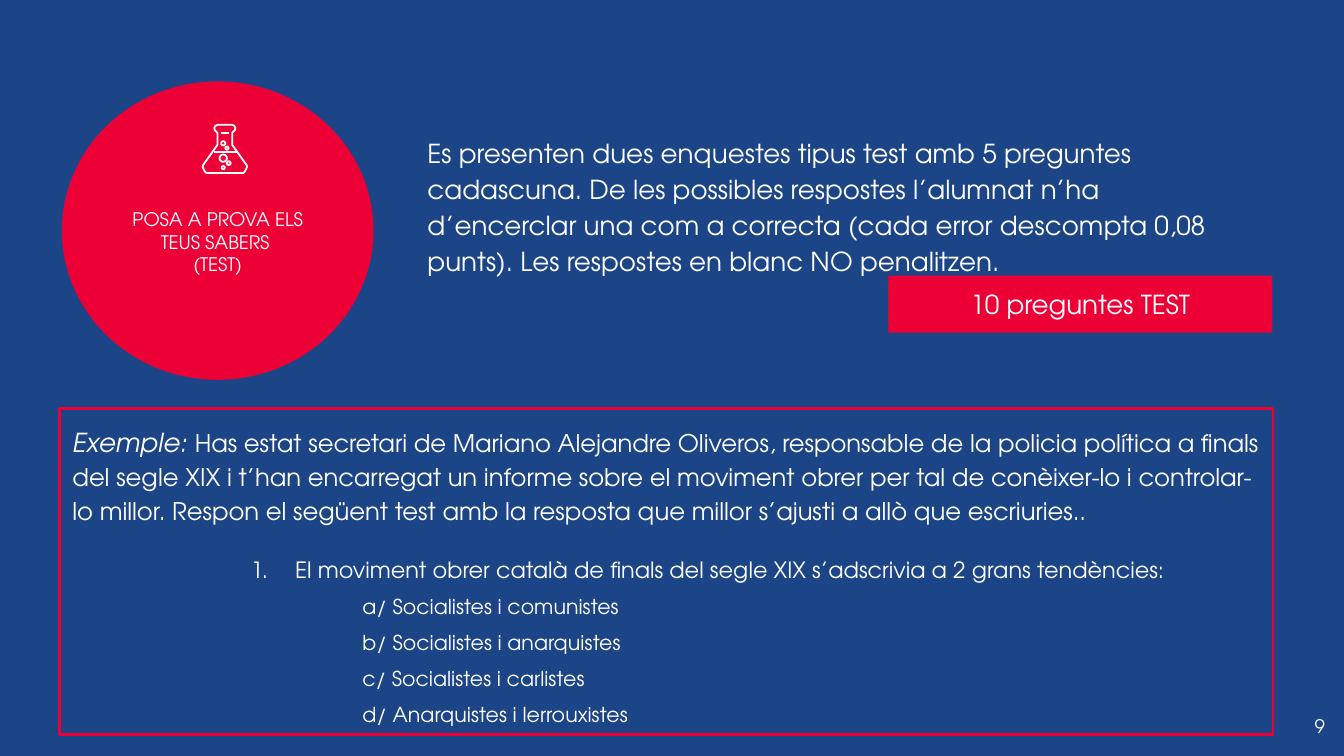
from lxml.etree import SubElement
from pptx import Presentation
from pptx.dml.color import RGBColor
from pptx.enum.shapes import MSO_CONNECTOR, MSO_SHAPE
from pptx.enum.text import MSO_ANCHOR, PP_ALIGN
from pptx.oxml.ns import qn
from pptx.util import Cm, Pt

BLUE, RED, WHITE = "1C4587", "ED0036", "FFFFFF"
FONT = "TeX Gyre Adventor"
INSET = 0.25

# Runs are (text, size, italic)
PAGE_NUMBER = [("9", 10, False)]
EXAMPLE = [
    ("Exemple: ", 14, True),
    ("Has estat secretari de Mariano Alejandre Oliveros, responsable de la policia "
     "política a finals del segle XIX i t’han encarregat un informe sobre el moviment "
     "obrer per tal de conèixer-lo i controlar-lo millor. Respon el següent test amb la "
     "resposta que millor s’ajusti a allò que escriuries..", 13, False),
]
BANNER = [("10 preguntes TEST", 14, False)]
INTRO = [
    ("Es presenten dues enquestes tipus test amb 5 preguntes cadascuna. De les "
     "possibles respostes l’alumnat n’ha d’encerclar una com a correcta (cada error "
     "descompta 0,08 punts). Les respostes en blanc NO penalitzen.", 14, False),
]
BADGE = [[("POSA A PROVA ELS TEUS SABERS ", 10, False)], [("(TEST)", 10, False)]]
QUESTION = [("El moviment obrer català de finals del segle XIX s’adscrivia "
             "a 2 grans tendències:", 12, False)]
ANSWERS = ["a/ Socialistes i comunistes", "b/ Socialistes i anarquistes",
           "c/ Socialistes i carlistes", "d/ Anarquistes i lerrouxistes"]

# Flask: right half of the outline in hundredths of a cm from its top centre
FLASK_TOP = (4.25, 2.36)
FLASK_HALF = [(14, 0), (18, 2), (20, 6), (19, 10), (14, 15), (14, 38),
              (41, 76), (42, 80), (41, 82), (38, 88), (35, 91)]
FLASK_LEVELS = [(4.04, 4.47, 2.87), (4.18, 4.32, 2.51)]  # left, right, height
BUBBLES = [(4.29, 3.05, 0.07), (4.15, 2.92, 0.14), (4.19, 3.14, 0.06),
           (4.26, 2.77, 0.06), (4.18, 2.67, 0.08)]  # left, top, diameter


def color(hex_string):
    return RGBColor.from_string(hex_string)


def paint(shape, fill=None, line=None, width=1.5):
    shape.shadow.inherit = False
    if fill:
        shape.fill.solid()
        shape.fill.fore_color.rgb = color(fill)
    else:
        shape.fill.background()
    if line:
        shape.line.color.rgb = color(line)
        shape.line.width = Pt(width)
    else:
        shape.line.fill.background()


def write(shape, paragraphs, align=PP_ALIGN.LEFT, anchor=MSO_ANCHOR.TOP,
          spacing=None, before=0):
    """Fill the shape with paragraphs and return them."""
    frame = shape.text_frame
    frame.word_wrap = True
    frame.vertical_anchor = anchor
    frame.margin_left = frame.margin_right = Cm(INSET)
    frame.margin_top = frame.margin_bottom = Cm(INSET)
    written = []
    for index, runs in enumerate(paragraphs):
        paragraph = frame.add_paragraph() if index else frame.paragraphs[0]
        paragraph.alignment = align
        paragraph.space_before = Pt(before)
        if spacing:
            paragraph.line_spacing = spacing
        for text, size, italic in runs:
            run = paragraph.add_run()
            run.text = text
            run.font.name = FONT
            run.font.size = Pt(size)
            run.font.italic = italic
            run.font.color.rgb = color(WHITE)
        written.append(paragraph)
    return written


def indent(paragraph, left, first):
    properties = paragraph._p.get_or_add_pPr()
    properties.set("marL", str(Cm(left)))
    properties.set("indent", str(Cm(first)))
    return properties


def draw_flask(shapes):
    icon = shapes.add_group_shape().shapes
    outline = FLASK_HALF + [(-x, y) for x, y in reversed(FLASK_HALF)]
    builder = icon.build_freeform(*outline[0], scale=Cm(0.01))
    builder.add_line_segments(outline[1:], close=True)
    glass = builder.convert_to_shape(*map(Cm, FLASK_TOP))
    paint(glass, line=WHITE, width=0.96)
    for left, right, height in FLASK_LEVELS:
        level = icon.add_connector(MSO_CONNECTOR.STRAIGHT, Cm(left), Cm(height),
                                   Cm(right), Cm(height))
        level.line.color.rgb = color(WHITE)
        level.line.width = Pt(0.96)
        SubElement(level._element.spPr, qn("a:effectLst"))
    for left, top, diameter in BUBBLES:
        bubble = icon.add_shape(MSO_SHAPE.OVAL, Cm(left), Cm(top),
                                Cm(diameter), Cm(diameter))
        paint(bubble, line=WHITE, width=0.96)


def main():
    deck = Presentation()
    deck.slide_width, deck.slide_height = Cm(25.4), Cm(14.29)
    slide = deck.slides.add_slide(deck.slide_layouts[6])
    slide.background.fill.solid()
    slide.background.fill.fore_color.rgb = color(BLUE)
    shapes = slide.shapes

    page_number = shapes.add_textbox(Cm(23.77), Cm(13.18), Cm(1.52), Cm(1.09))
    write(page_number, [PAGE_NUMBER], PP_ALIGN.RIGHT, MSO_ANCHOR.MIDDLE)

    example = shapes.add_shape(MSO_SHAPE.RECTANGLE, Cm(1.12), Cm(7.73), Cm(22.94), Cm(6.15))
    paint(example, line=RED)
    write(example, [EXAMPLE], spacing=1.15, before=6)

    banner = shapes.add_shape(MSO_SHAPE.RECTANGLE, Cm(16.79), Cm(5.21), Cm(7.26), Cm(1.08))
    paint(banner, fill=RED)
    write(banner, [BANNER], PP_ALIGN.CENTER, MSO_ANCHOR.MIDDLE, before=6)

    intro = shapes.add_textbox(Cm(7.83), Cm(2.26), Cm(16.1), Cm(3.12))
    write(intro, [INTRO], spacing=1.15, before=6)

    badge = shapes.add_shape(MSO_SHAPE.OVAL, Cm(1.17), Cm(1.54), Cm(5.89), Cm(5.64))
    paint(badge, fill=RED)
    write(badge, BADGE, PP_ALIGN.CENTER, MSO_ANCHOR.MIDDLE)
    badge.text_frame.margin_top = Cm(0.67)  # keeps the label below the flask
    draw_flask(shapes)

    quiz = shapes.add_textbox(Cm(4.06), Cm(10.19), Cm(18.49), Cm(3.43))
    question, *answers = write(
        quiz, [QUESTION] + [[(answer, 11, False)] for answer in ANSWERS], before=6)
    question.line_spacing = 1.15
    numbering = indent(question, 1.27, -0.84)
    SubElement(SubElement(numbering, qn("a:buClr")), qn("a:srgbClr"), val=WHITE)
    SubElement(numbering, qn("a:buFont"), typeface=FONT)
    SubElement(numbering, qn("a:buAutoNum"), type="arabicPeriod")
    for answer in answers:
        indent(answer, 1.27, 1.27)

    deck.save("out.pptx")


if __name__ == "__main__":
    main()
